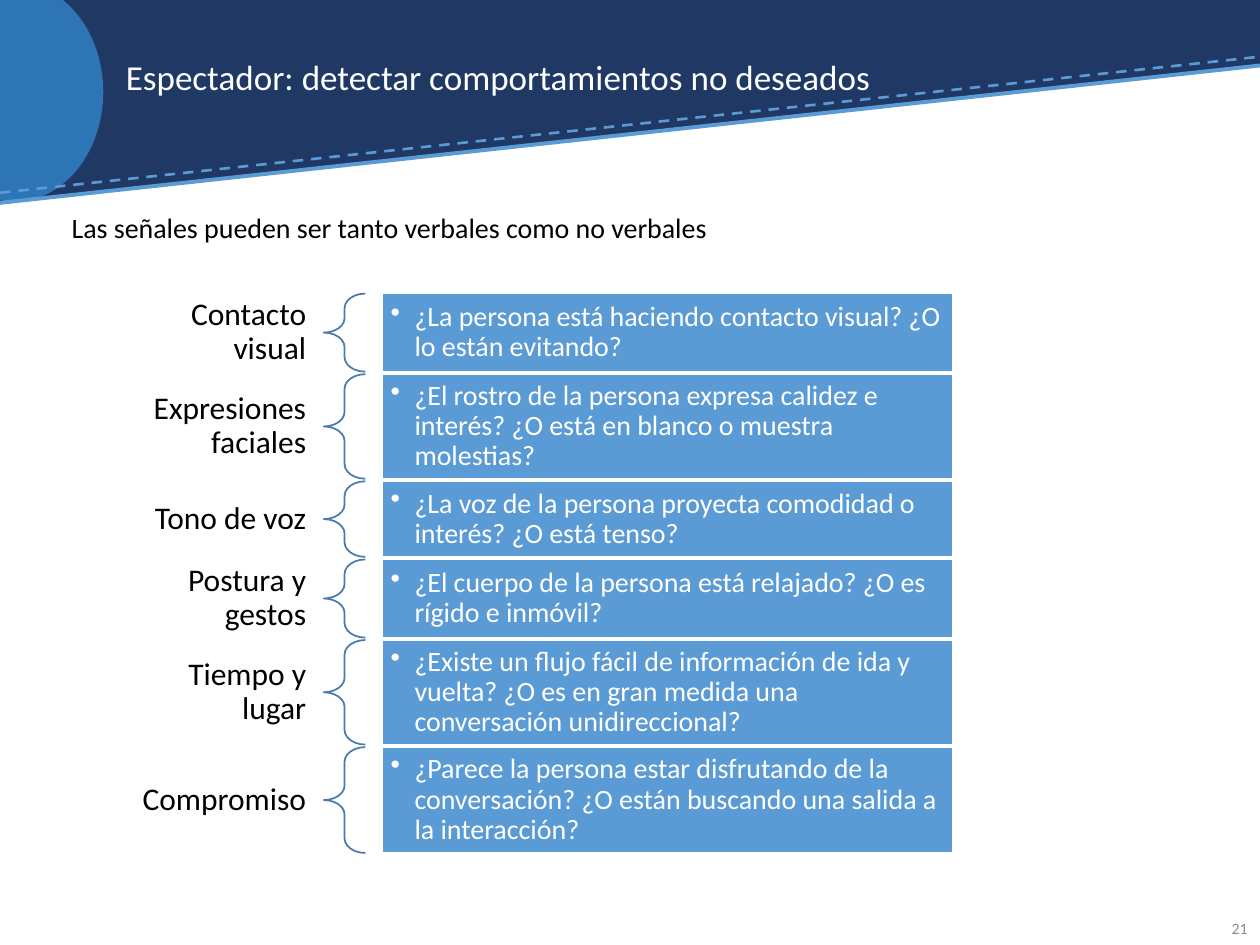
from dataclasses import dataclass

from lxml.etree import SubElement
from pptx import Presentation
from pptx.dml.color import RGBColor
from pptx.enum.dml import MSO_LINE
from pptx.enum.shapes import MSO_CONNECTOR, MSO_SHAPE
from pptx.enum.text import MSO_ANCHOR, PP_ALIGN
from pptx.oxml.ns import qn
from pptx.util import Inches, Pt


@dataclass(frozen=True)
class Theme:
    font: str = "Calibri"
    navy: str = "203864"
    circle: str = "2E75B6"
    accent: str = "5B9BD5"
    brace: str = "497CAB"
    white: str = "FFFFFF"
    black: str = "000000"
    gray: str = "8C8C8C"
    title_size: int = 20
    label_size: int = 18
    body_size: int = 16
    number_size: int = 9


THEME = Theme()
LABEL_HEIGHTS = {1: 0.36, 2: 0.62}
SIGNALS = [
    ("Contacto visual", 2, 0.62,
     "¿La persona está haciendo contacto visual? ¿O lo están evitando?"),
    ("Expresiones faciales", 2, 0.83,
     "¿El rostro de la persona expresa calidez e interés? ¿O está en blanco o muestra molestias?"),
    ("Tono de voz", 1, 0.6,
     "¿La voz de la persona proyecta comodidad o interés? ¿O está tenso?"),
    ("Postura y gestos", 2, 0.62,
     "¿El cuerpo de la persona está relajado? ¿O es rígido e inmóvil?"),
    ("Tiempo y lugar", 2, 0.83,
     "¿Existe un flujo fácil de información de ida y vuelta? "
     "¿O es en gran medida una conversación unidireccional?"),
    ("Compromiso", 1, 0.84,
     "¿Parece la persona estar disfrutando de la conversación? "
     "¿O están buscando una salida a la interacción?"),
]


def color(value):
    return RGBColor.from_string(value)


def add_box(shapes, kind, left, top, width, height, fill=None, line=None):
    shape = shapes.add_shape(kind, Inches(left), Inches(top), Inches(width), Inches(height))
    shape.shadow.inherit = False
    if fill:
        shape.fill.solid()
        shape.fill.fore_color.rgb = color(fill)
    else:
        shape.fill.background()
    if line:
        shape.line.color.rgb = color(line)
        shape.line.width = Pt(1)
    else:
        shape.line.fill.background()
    return shape


def write(shape, text, size, text_color, align=PP_ALIGN.LEFT, anchor=MSO_ANCHOR.MIDDLE,
          insets=(0.1, 0.05), bullet_indent=None, line_spacing=0.9):
    frame = shape.text_frame
    frame.text = text
    frame.word_wrap = True
    frame.vertical_anchor = anchor
    frame.margin_left = frame.margin_right = Inches(insets[0])
    frame.margin_top = frame.margin_bottom = Inches(insets[1])
    paragraph = frame.paragraphs[0]
    paragraph.alignment = align
    paragraph.line_spacing = line_spacing
    if bullet_indent:
        properties = paragraph._p.get_or_add_pPr()
        properties.set("marL", str(Inches(bullet_indent)))
        properties.set("indent", str(-Inches(bullet_indent)))
        SubElement(properties, qn("a:buChar")).set("char", "•")
    font = paragraph.runs[0].font
    font.name = THEME.font
    font.size = Pt(size)
    font.color.rgb = color(text_color)


def add_text(shapes, left, top, width, height, text, size, text_color, **options):
    box = shapes.add_textbox(Inches(left), Inches(top), Inches(width), Inches(height))
    write(box, text, size, text_color, **options)


def add_rule(shapes, left, top, width, rise, weight, dash=None):
    rule = shapes.add_connector(MSO_CONNECTOR.STRAIGHT, Inches(left), Inches(top),
                                Inches(left + width), Inches(top - rise))
    rule.line.color.rgb = color(THEME.accent)
    rule.line.width = Pt(weight)
    if dash:
        rule.line.dash_style = dash
    SubElement(rule._element.spPr, qn("a:effectLst"))


def add_header(slide, left, top, width, title):
    shapes = slide.shapes
    add_box(shapes, MSO_SHAPE.RECTANGLE, left, top, width, 0.52, THEME.navy)
    wedge = add_box(shapes, MSO_SHAPE.RIGHT_TRIANGLE, left, top + 0.51, width, 1.09, THEME.navy)
    wedge._element.spPr.find(qn("a:xfrm")).set("flipV", "1")
    add_box(shapes, MSO_SHAPE.OVAL, left - 0.59, top - 0.14, 1.41, 1.74, THEME.circle)
    add_rule(shapes, left, top + 1.53, width, 1.08, 1.5, MSO_LINE.DASH)
    add_rule(shapes, left, top + 1.61, width, 1.09, 2.25)
    add_text(shapes, left + 0.9, top + 0.2, 8.05, 0.86, title, THEME.title_size, THEME.white)


def add_signal(shapes, left, top, height, label, label_lines, question):
    label_height = LABEL_HEIGHTS[label_lines]
    add_text(shapes, left, top + (height - label_height) / 2, 1.67, label_height, label,
             THEME.label_size, THEME.black, align=PP_ALIGN.RIGHT, insets=(0.14, 0.05))
    brace = add_box(shapes, MSO_SHAPE.LEFT_BRACE, left + 1.67, top, 0.33, height,
                    line=THEME.brace)
    brace.adjustments[0] = 0.35
    brace.adjustments[1] = 0.5
    panel = add_box(shapes, MSO_SHAPE.RECTANGLE, left + 2.13, top, 4.53, height,
                    THEME.accent, THEME.white)
    write(panel, question, THEME.body_size, THEME.white, insets=(0.07, 0.07),
          bullet_indent=0.19)


def add_signal_list(slide, left, top, gap):
    shapes = slide.shapes.add_group_shape().shapes
    for label, label_lines, height, question in SIGNALS:
        add_signal(shapes, left, top, height, label, label_lines, question)
        top += height + gap


def main():
    presentation = Presentation()
    presentation.slide_width = Inches(10)
    presentation.slide_height = Inches(7.5)
    slide = presentation.slides.add_slide(presentation.slide_layouts[6])
    add_header(slide, 0, 0, 10, "Espectador: detectar comportamientos no deseados")
    add_text(slide.shapes, 0.47, 1.65, 8.83, 5.3,
             "Las señales pueden ser tanto verbales como no verbales",
             THEME.body_size, THEME.black, anchor=MSO_ANCHOR.TOP)
    add_text(slide.shapes, 9.47, 7.17, 0.53, 0.4, "21", THEME.number_size, THEME.gray,
             align=PP_ALIGN.RIGHT, line_spacing=1.0)
    add_signal_list(slide, 0.9, 2.33, 0.02)
    presentation.save("out.pptx")


if __name__ == "__main__":
    main()
